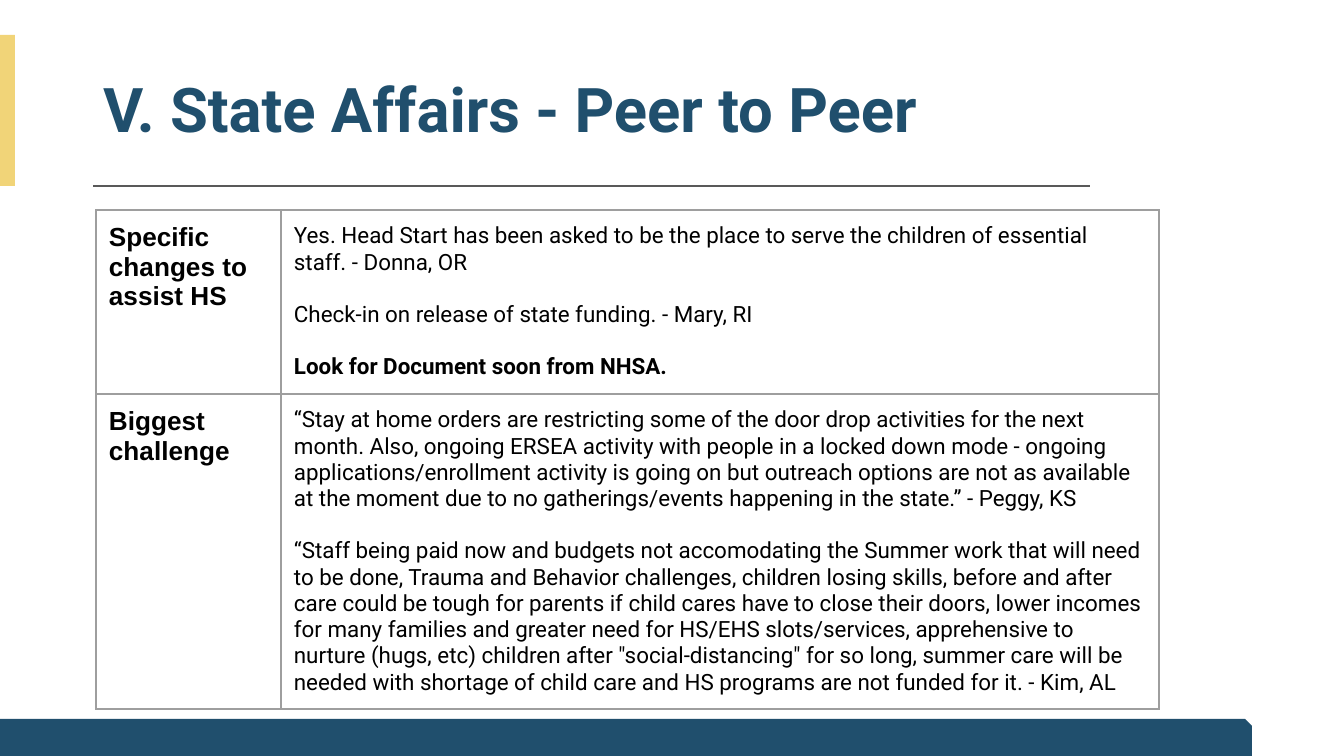
from lxml.etree import SubElement
from pptx import Presentation
from pptx.dml.color import RGBColor
from pptx.enum.shapes import MSO_CONNECTOR, MSO_SHAPE
from pptx.enum.text import MSO_ANCHOR, MSO_AUTO_SIZE, PP_ALIGN
from pptx.oxml.ns import qn
from pptx.util import Emu, Pt

EMU_PER_PX = 9144000 / 1344
NAVY = "204F6D"
YELLOW = "F1D478"
BLACK = "000000"
WHITE = "FFFFFF"
RULE_GREY = "595959"
BORDER_GREY = "9E9E9E"

COLUMN_WIDTHS = [185, 383, 495]
ROW_HEIGHTS = [184, 315]
TOPICS = [
    ("Specific changes to assist HS", [
        ("Yes. Head Start has been asked to be the place to serve the children "
         "of essential staff. - Donna, OR", False),
        ("Check-in on release of state funding. - Mary, RI", False),
        ("Look for Document soon from NHSA.", True),
    ]),
    ("Biggest challenge", [
        ("“Stay at home orders are restricting some of the door drop activities "
         "for the next month. Also, ongoing ERSEA activity with people in a locked "
         "down mode - ongoing applications/enrollment activity is going on but "
         "outreach options are not as available at the moment due to no "
         "gatherings/events happening in the state.” - Peggy, KS", False),
        ("“Staff being paid now and budgets not accomodating the Summer work that "
         "will need to be done, Trauma and Behavior challenges, children losing "
         "skills, before and after care could be tough for parents if child cares "
         "have to close their doors, lower incomes for many families and greater "
         "need for HS/EHS slots/services, apprehensive to nurture (hugs, etc) "
         "children after \"social-distancing\" for so long, summer care will be "
         "needed with shortage of child care and HS programs are not funded for "
         "it. - Kim, AL", False),
    ]),
]


def px(length):
    return Emu(round(length * EMU_PER_PX))


def colour(hex_value):
    return RGBColor.from_string(hex_value)


def style(paragraph, font_name, size, hex_value, bold):
    font = paragraph.font
    font.name = font_name
    font.size = Pt(size)
    font.bold = bold
    font.color.rgb = colour(hex_value)


def add_bar(slide, left, top, width, height, snip, hex_value):
    bar = slide.shapes.add_shape(
        MSO_SHAPE.SNIP_1_RECTANGLE, px(left), px(top), px(width), px(height))
    bar.adjustments[0] = snip
    bar.shadow.inherit = False
    bar.fill.solid()
    bar.fill.fore_color.rgb = colour(hex_value)
    bar.line.fill.background()


def add_rule(slide, start, end, y):
    rule = slide.shapes.add_connector(
        MSO_CONNECTOR.STRAIGHT, px(start), px(y), px(end), px(y))
    rule.line.color.rgb = colour(RULE_GREY)
    rule.line.width = Pt(0.75)
    SubElement(rule._element.spPr, qn("a:effectLst"))


def set_title(slide, text):
    title = slide.shapes.title
    title.left, title.top, title.width, title.height = map(px, (93, 40, 1004, 146))
    frame = title.text_frame
    frame.text = text
    frame.word_wrap = True
    frame.auto_size = MSO_AUTO_SIZE.NONE
    frame.vertical_anchor = MSO_ANCHOR.MIDDLE
    frame.margin_left = frame.margin_right = px(10)
    frame.margin_top = frame.margin_bottom = px(5)
    heading = frame.paragraphs[0]
    heading.alignment = PP_ALIGN.LEFT
    heading.line_spacing = 0.9
    style(heading, "Roboto", 33, NAVY, True)


def format_cell(cell):
    cell.margin_left = cell.margin_right = px(13)
    cell.margin_top = cell.margin_bottom = px(13)
    cell_properties = cell._tc.get_or_add_tcPr()
    for side in ("a:lnL", "a:lnR", "a:lnT", "a:lnB"):
        border = SubElement(cell_properties, qn(side), w=str(Pt(0.75)))
        border_fill = SubElement(border, qn("a:solidFill"))
        SubElement(border_fill, qn("a:srgbClr"), val=BORDER_GREY)
    cell.fill.background()


def write_answers(cell, answers):
    frame = cell.text_frame
    for index, (answer, bold) in enumerate(answers):
        paragraph = frame.add_paragraph() if index else frame.paragraphs[0]
        paragraph.text = answer
        if index:
            paragraph.space_before = Pt(14)
        style(paragraph, "Roboto", 12, BLACK, bold)


def add_topics_table(slide):
    table = slide.shapes.add_table(
        len(ROW_HEIGHTS), len(COLUMN_WIDTHS), px(96), px(210),
        px(sum(COLUMN_WIDTHS)), px(sum(ROW_HEIGHTS))).table
    table.first_row = False
    table.horz_banding = False
    for column, width in zip(table.columns, COLUMN_WIDTHS):
        column.width = px(width)
    for row, height in zip(table.rows, ROW_HEIGHTS):
        row.height = px(height)
    for cell in table.iter_cells():
        format_cell(cell)
    for row_index, (topic, answers) in enumerate(TOPICS):
        topic_cell = table.cell(row_index, 0)
        topic_cell.text = topic
        style(topic_cell.text_frame.paragraphs[0], "Arial", 14, BLACK, True)
        answer_cell = table.cell(row_index, 1)
        answer_cell.merge(table.cell(row_index, 2))
        write_answers(answer_cell, answers)


def main():
    presentation = Presentation()
    presentation.slide_width = px(1344)
    presentation.slide_height = px(756)
    slide = presentation.slides.add_slide(presentation.slide_layouts[5])
    slide.background.fill.solid()
    slide.background.fill.fore_color.rgb = colour(WHITE)
    add_rule(slide, 1090, 93, 186)
    add_bar(slide, -1, 35, 16, 151, 0, YELLOW)
    add_bar(slide, -1, 719, 1253, 40, 0.17, NAVY)
    set_title(slide, "V. State Affairs - Peer to Peer")
    add_topics_table(slide)
    presentation.save("out.pptx")


if __name__ == "__main__":
    main()
